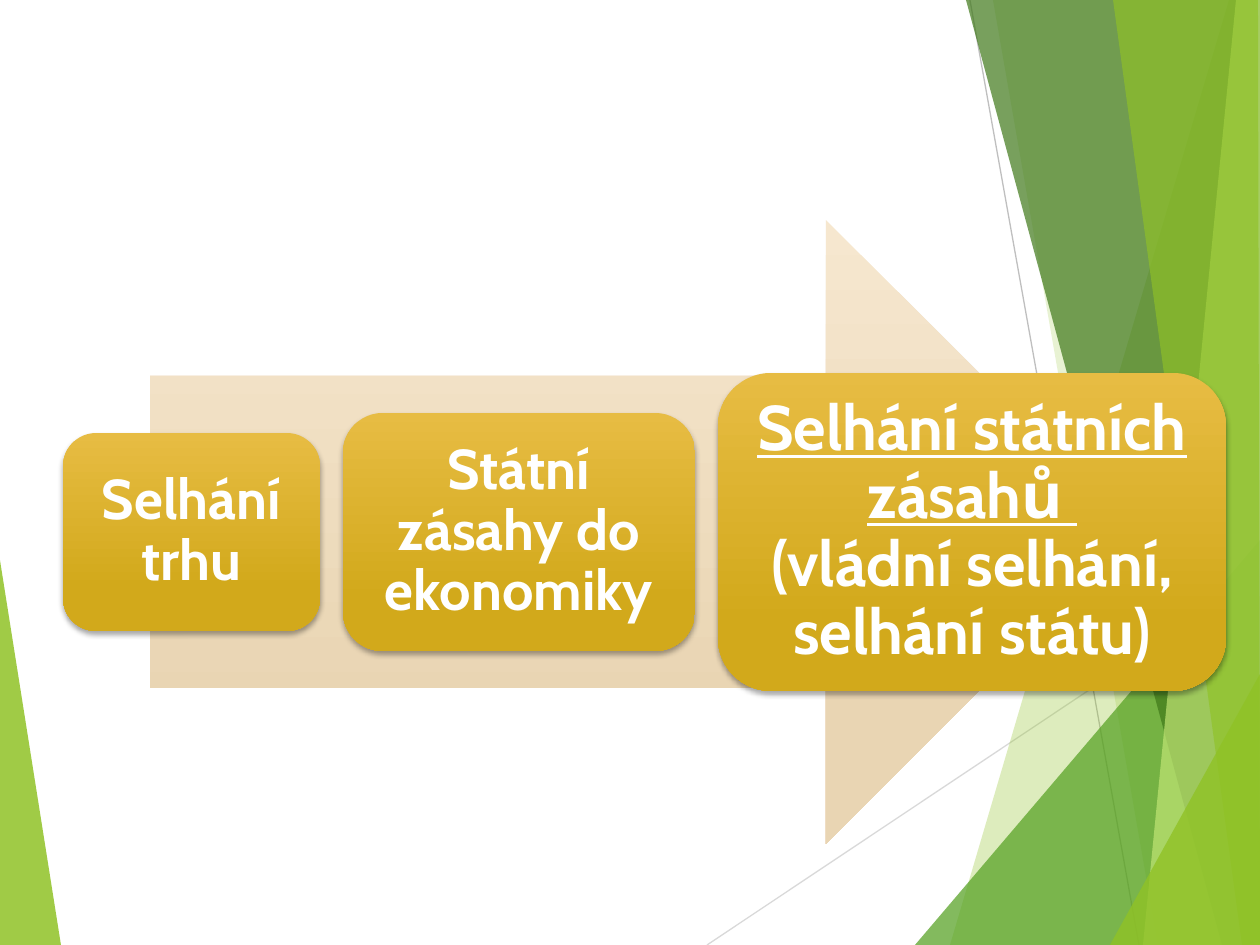
from typing import NamedTuple

from pptx import Presentation
from pptx.dml.color import RGBColor
from pptx.dml.fill import FillFormat
from pptx.enum.shapes import MSO_CONNECTOR as Connector, MSO_SHAPE as Preset
from pptx.enum.text import MSO_ANCHOR as Anchor, PP_ALIGN as Align
from pptx.oxml.ns import qn
from pptx.oxml.xmlchemy import OxmlElement
from pptx.shapes.autoshape import Shape
from pptx.slide import Slide
from pptx.util import Emu, Pt

EMU_PER_PX = 914400 / 126
WIDTH, HEIGHT = 1260, 945
FONT = "Cabin"

WHITE = RGBColor(0xFF, 0xFF, 0xFF)
LIME = RGBColor(0x90, 0xC2, 0x26)
GREEN = RGBColor(0x54, 0xA0, 0x21)
DARK_GREEN = RGBColor(0x3F, 0x78, 0x19)
PALE_LIME = RGBColor(0xC0, 0xE4, 0x74)
LIGHT_GRAY = RGBColor(0xD9, 0xD9, 0xD9)
GRAY = RGBColor(0xBF, 0xBF, 0xBF)
CREAM = RGBColor(0xF6, 0xE7, 0xCF)
SAND = RGBColor(0xE9, 0xD5, 0xB3)
LIGHT_GOLD = RGBColor(0xE7, 0xBC, 0x43)
GOLD = RGBColor(0xD2, 0xA9, 0x1B)


class Facet(NamedTuple):
    points: list[tuple[int, int]]
    color: RGBColor
    opacity: int


class Ray(NamedTuple):
    start: tuple[int, int]
    end: tuple[int, int]
    color: RGBColor


class Step(NamedTuple):
    width: int
    height: int
    size: int
    inset: int
    text: str
    underlined: str = ""


LEFT_FACET = Facet([(0, 560), (61, HEIGHT), (0, HEIGHT)], LIME, 85)
RAYS = [
    Ray((707, HEIGHT), (WIDTH, 576), LIGHT_GRAY),
    Ray((970, 0), (1139, HEIGHT), GRAY),
]
RIGHT_FACETS = [
    Facet([(1229, 0), (950, HEIGHT), (WIDTH, HEIGHT), (WIDTH, 0)], LIME, 30),
    Facet([(993, 0), (1158, HEIGHT), (WIDTH, HEIGHT), (WIDTH, 0)], LIME, 20),
    Facet([(915, HEIGHT), (WIDTH, 540), (WIDTH, HEIGHT)], GREEN, 72),
    Facet([(966, 0), (1222, HEIGHT), (WIDTH, HEIGHT), (WIDTH, 0)], DARK_GREEN, 70),
    Facet([(1236, 0), (1143, HEIGHT), (WIDTH, HEIGHT), (WIDTH, 0)], PALE_LIME, 70),
    Facet([(1113, 0), (1242, HEIGHT), (WIDTH, HEIGHT), (1258, 0)], LIME, 65),
    Facet([(1110, HEIGHT), (WIDTH, 674), (WIDTH, HEIGHT)], LIME, 80),
]
STEPS = [
    Step(257, 198, 32, 16, "Selhání trhu"),
    Step(352, 238, 32, 16, "Státní zásahy do ekonomiky"),
    Step(508, 318, 36, 19, "(vládní selhání, selhání státu)", "Selhání státních zásahů "),
]
STEPS_LEFT, STEP_GAP, MIDDLE = 63, 23, 532
ARROW_LEFT, ARROW_WIDTH, ARROW_HEIGHT = 150, 988, 624


def px(length: float) -> Emu:
    return Emu(round(length * EMU_PER_PX))


def add_facet(slide: Slide, facet: Facet) -> None:
    builder = slide.shapes.build_freeform(*facet.points[0], scale=EMU_PER_PX)
    builder.add_line_segments(facet.points[1:], close=True)
    shape = builder.convert_to_shape()
    shape.shadow.inherit = False
    shape.line.fill.background()
    shape.fill.solid()
    shape.fill.fore_color.rgb = facet.color
    alpha = OxmlElement("a:alpha")
    alpha.set("val", str(facet.opacity * 1000))
    shape.element.spPr.find(qn("a:solidFill"))[0].append(alpha)


def add_ray(slide: Slide, ray: Ray) -> None:
    ends = [px(value) for value in ray.start + ray.end]
    connector = slide.shapes.add_connector(Connector.STRAIGHT, *ends)
    connector.line.color.rgb = ray.color
    connector.line.width = Pt(0.75)
    connector.element.spPr.append(OxmlElement("a:effectLst"))


def set_gradient(fill: FillFormat, top: RGBColor, bottom: RGBColor) -> None:
    fill.gradient()
    fill.gradient_angle = 270
    for stop, color, position in zip(fill.gradient_stops, (top, bottom), (0, 0.78)):
        stop.color.rgb = color
        stop.position = position


def add_centered_shape(slide: Slide, preset: Preset, left: int, width: int, height: int,
                       top_color: RGBColor, bottom_color: RGBColor) -> Shape:
    top = MIDDLE - height / 2
    shape = slide.shapes.add_shape(preset, px(left), px(top), px(width), px(height))
    shape.shadow.inherit = False
    shape.line.fill.background()
    set_gradient(shape.fill, top_color, bottom_color)
    return shape


def add_drop_shadow(shape: Shape) -> None:
    shadow = OxmlElement("a:outerShdw")
    settings = {"blurRad": Pt(3), "dist": Pt(2), "dir": 90 * 60000, "rotWithShape": 0}
    for name, value in settings.items():
        shadow.set(name, str(int(value)))
    color = OxmlElement("a:srgbClr")
    color.set("val", "000000")
    alpha = OxmlElement("a:alpha")
    alpha.set("val", "35000")
    color.append(alpha)
    shadow.append(color)
    shape.element.spPr.find(qn("a:effectLst")).append(shadow)


def add_step(slide: Slide, step: Step, left: int) -> None:
    shape = add_centered_shape(slide, Preset.ROUNDED_RECTANGLE, left, step.width,
                               step.height, LIGHT_GOLD, GOLD)
    add_drop_shadow(shape)
    frame = shape.text_frame
    frame.word_wrap = True
    frame.vertical_anchor = Anchor.MIDDLE
    frame.margin_left = frame.margin_right = px(step.inset)
    frame.margin_top = frame.margin_bottom = px(step.inset)
    paragraph = frame.paragraphs[0]
    paragraph.alignment = Align.CENTER
    paragraph.line_spacing = 0.9
    for text, underline in ((step.underlined, True), (step.text, False)):
        if not text:
            continue
        run = paragraph.add_run()
        run.text = text
        run.font.name = FONT
        run.font.size = Pt(step.size)
        run.font.bold = True
        run.font.underline = underline
        run.font.color.rgb = WHITE
        if underline:
            paragraph.add_line_break()


def main() -> None:
    presentation = Presentation()
    presentation.slide_width = px(WIDTH)
    presentation.slide_height = px(HEIGHT)
    slide = presentation.slides.add_slide(presentation.slide_layouts[6])

    add_facet(slide, LEFT_FACET)
    for ray in RAYS:
        add_ray(slide, ray)
    for facet in RIGHT_FACETS:
        add_facet(slide, facet)

    add_centered_shape(slide, Preset.RIGHT_ARROW, ARROW_LEFT, ARROW_WIDTH,
                       ARROW_HEIGHT, CREAM, SAND)
    left = STEPS_LEFT
    for step in STEPS:
        add_step(slide, step, left)
        left += step.width + STEP_GAP

    presentation.save("out.pptx")


if __name__ == "__main__":
    main()
